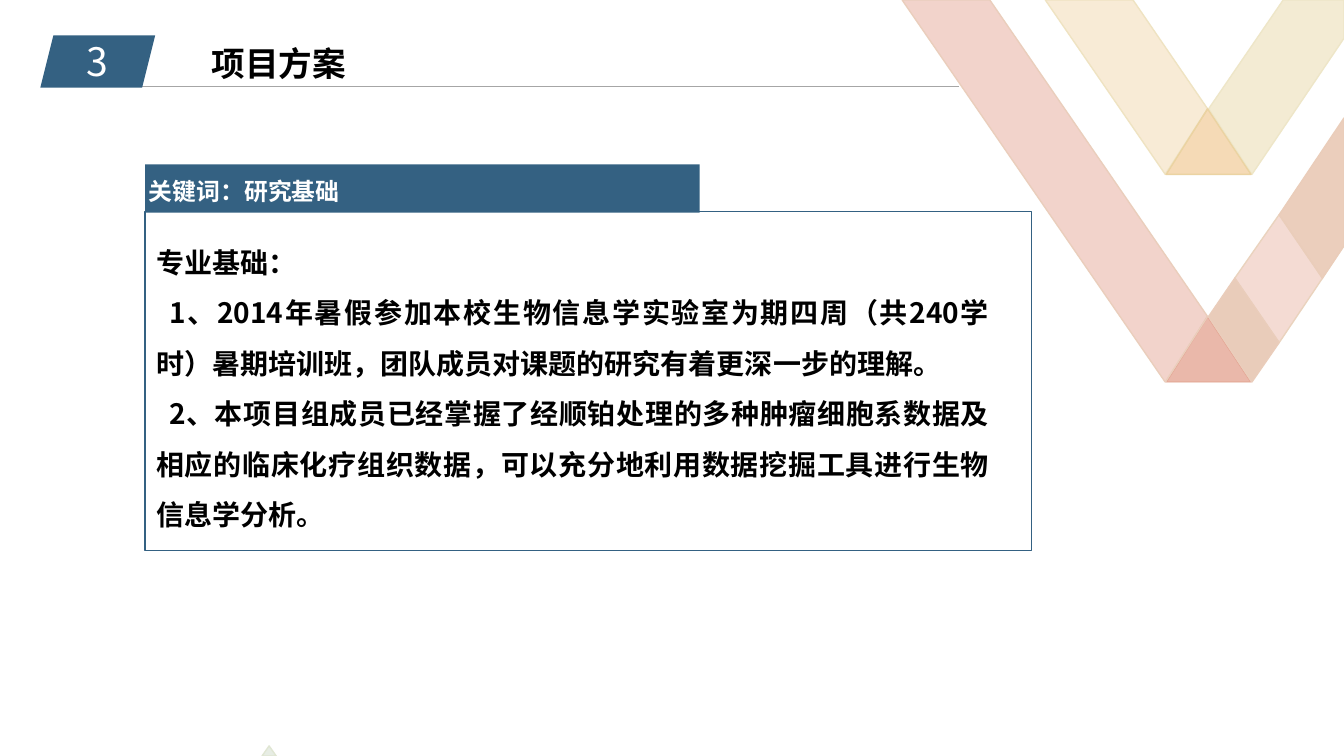
from dataclasses import dataclass

from lxml import etree
from pptx import Presentation
from pptx.dml.color import RGBColor
from pptx.enum.shapes import MSO_CONNECTOR, MSO_SHAPE
from pptx.enum.text import MSO_ANCHOR, MSO_AUTO_SIZE, PP_ALIGN
from pptx.oxml.ns import qn
from pptx.util import Inches, Pt

STRAIGHT = MSO_CONNECTOR.STRAIGHT
RECT, SLANT = MSO_SHAPE.RECTANGLE, MSO_SHAPE.PARALLELOGRAM
LEFT, CENTER, JUSTIFY = PP_ALIGN.LEFT, PP_ALIGN.CENTER, PP_ALIGN.JUSTIFY
TOP, MIDDLE = MSO_ANCHOR.TOP, MSO_ANCHOR.MIDDLE
FIXED = MSO_AUTO_SIZE.NONE


@dataclass(frozen=True)
class Theme:
    font: str = "Noto Sans CJK SC"
    blue: str = "346182"
    gray: str = "A6A6A6"
    white: str = "FFFFFF"
    black: str = "000000"
    red: str = "D57053"
    gold: str = "E7B05E"
    amber: str = "E49B35"
    cream: str = "EFE3C2"
    green: str = "A2B894"
    number: int = 28
    title: int = 24
    body: int = 20
    label: int = 17


class Board:
    """A slide on a grid whose cells are a tenth of an inch."""

    def __init__(self, theme, cols=133.33, rows=75):
        self.theme = theme
        self.deck = Presentation()
        self.deck.slide_width = self.cell(cols)
        self.deck.slide_height = self.cell(rows)
        self.slide = self.deck.slides.add_slide(self.deck.slide_layouts[5])
        self.shapes = self.slide.shapes

    def cell(self, n):
        return Inches(n / 10)

    def place(self, box):
        return [self.cell(n) for n in box]

    def fade(self, props, share):
        color = props.find(qn("a:solidFill"))[0]
        etree.SubElement(color, qn("a:alpha"), val=str(share * 1000))

    def paint(self, shape, fill=None, line=None, share=100, edge=100):
        shape.shadow.inherit = False
        props = shape._element.spPr
        if fill:
            shape.fill.solid()
            shape.fill.fore_color.rgb = RGBColor.from_string(fill)
            if share < 100:
                self.fade(props, share)
        else:
            shape.fill.background()
        if line:
            shape.line.color.rgb = RGBColor.from_string(line)
            shape.line.width = Pt(1)
            if edge < 100:
                self.fade(props.find(qn("a:ln")), edge)
        else:
            shape.line.fill.background()

    def band(self, points, fill, share, line, edge=100):
        first, *rest = [self.place(point) for point in points]
        pen = self.shapes.build_freeform(*first)
        pen.add_line_segments(rest, close=True)
        self.paint(pen.convert_to_shape(), fill, line, share, edge)

    def block(self, kind, box, fill=None, line=None):
        self.paint(self.shapes.add_shape(kind, *self.place(box)), fill, line)

    def rule(self, start, end, color):
        line = self.shapes.add_connector(
            STRAIGHT, *self.place(start), *self.place(end))
        line.line.color.rgb = RGBColor.from_string(color)
        line.line.width = Pt(0.5)
        etree.SubElement(line._element.spPr, qn("a:effectLst"))

    def style(self, shape, lines, size, color, bold=True, align=LEFT,
              anchor=TOP, wrap=True, space=1.0, indent=0):
        frame = shape.text_frame
        frame.text = "\n".join(lines)
        frame.word_wrap = wrap
        frame.auto_size = FIXED
        frame.vertical_anchor = anchor
        for i, para in enumerate(frame.paragraphs):
            para.alignment = align
            para.line_spacing = space
            props = para._p.get_or_add_pPr()
            if indent and i:
                props.set("indent", str(self.cell(indent)))
            font = para.font
            font.name, font.size, font.bold = self.theme.font, Pt(size), bold
            font.color.rgb = RGBColor.from_string(color)
            etree.SubElement(props.find(qn("a:defRPr")), qn("a:ea"),
                             typeface=self.theme.font)

    def text(self, box, lines, size, color, **looks):
        shape = self.shapes.add_textbox(*self.place(box))
        self.style(shape, lines, size, color, **looks)

    def title(self, box, words, size, color):
        shape = self.shapes.title
        shape.left, shape.top, shape.width, shape.height = self.place(box)
        self.style(shape, [words], size, color, wrap=False)


def main():
    t = Theme()
    board = Board(t)

    # Ribbons, from back to front
    edge = 133.33
    bands = [
        ([(119.8, 31.4), (124.1, 37.9), (115.7, 37.9)], t.red, 49, "DF9B83", 49),
        ([(103.7, 0), (112.4, 0), (119.8, 10.8), (115.6, 17.3)],
         t.gold, 25, t.cream),
        ([(127.3, 0), (edge, 0), (edge, 3.8), (124.2, 17.3), (119.9, 10.8)],
         t.cream, 71, "EEE6C8"),
        ([(126.9, 21.3), (131.2, 27.6), (126.9, 34), (122.5, 27.6)],
         t.red, 25, "EAD3BE"),
        ([(edge, 11.7), (edge, 24.4), (131.2, 27.6), (126.9, 21.3)],
         "EBCEBC", 100, "EACDBA"),
        ([(122.5, 27.6), (126.9, 34), (124.2, 37.9), (119.9, 31.4)],
         "E9CCBA", 100, "EACDBB"),
        ([(119.8, 10.8), (124.1, 17.3), (115.7, 17.3)], t.amber, 36, "EBD3A2"),
        ([(26.7, 74), (27.4, 75), (26, 75)], t.green, 25, "E0E6D3"),
        ([(89.5, 0), (98.2, 0), (119.8, 31.4), (115.6, 37.9)],
         t.red, 30, "EACEBC"),
    ]
    for band in bands:
        board.band(*band)

    # Header
    board.rule((8.7, 8.6), (95.1, 8.6), t.gray)
    board.block(SLANT, (4, 3.5, 11.4, 5.2), fill=t.blue)
    board.text((4.1, 3.2, 11.2, 5.7), ["3"], t.number, t.white,
               bold=False, align=CENTER)
    board.title((20, 3.8, 15.5, 5), "项目方案", t.title, t.black)

    # Keyword panel
    board.block(RECT, (14.4, 21, 87.9, 33.6), line=t.blue)
    board.block(RECT, (14.4, 16.3, 55, 4.8), fill=t.blue)
    board.text((13.8, 17, 51.7, 3.9), ["关键词：研究基础"], t.label, t.white,
               anchor=MIDDLE)
    board.text((14.5, 22.2, 84.6, 31.3), [
        "专业基础：",
        "1、2014年暑假参加本校生物信息学实验室为期四周（共240学时）"
        "暑期培训班，团队成员对课题的研究有着更深一步的理解。",
        "2、本项目组成员已经掌握了经顺铂处理的多种肿瘤细胞系数据及"
        "相应的临床化疗组织数据，可以充分地利用数据挖掘工具进行生物信息学分析。",
    ], t.body, t.black, align=JUSTIFY, space=1.5, indent=1.3)

    board.deck.save("out.pptx")


if __name__ == "__main__":
    main()
